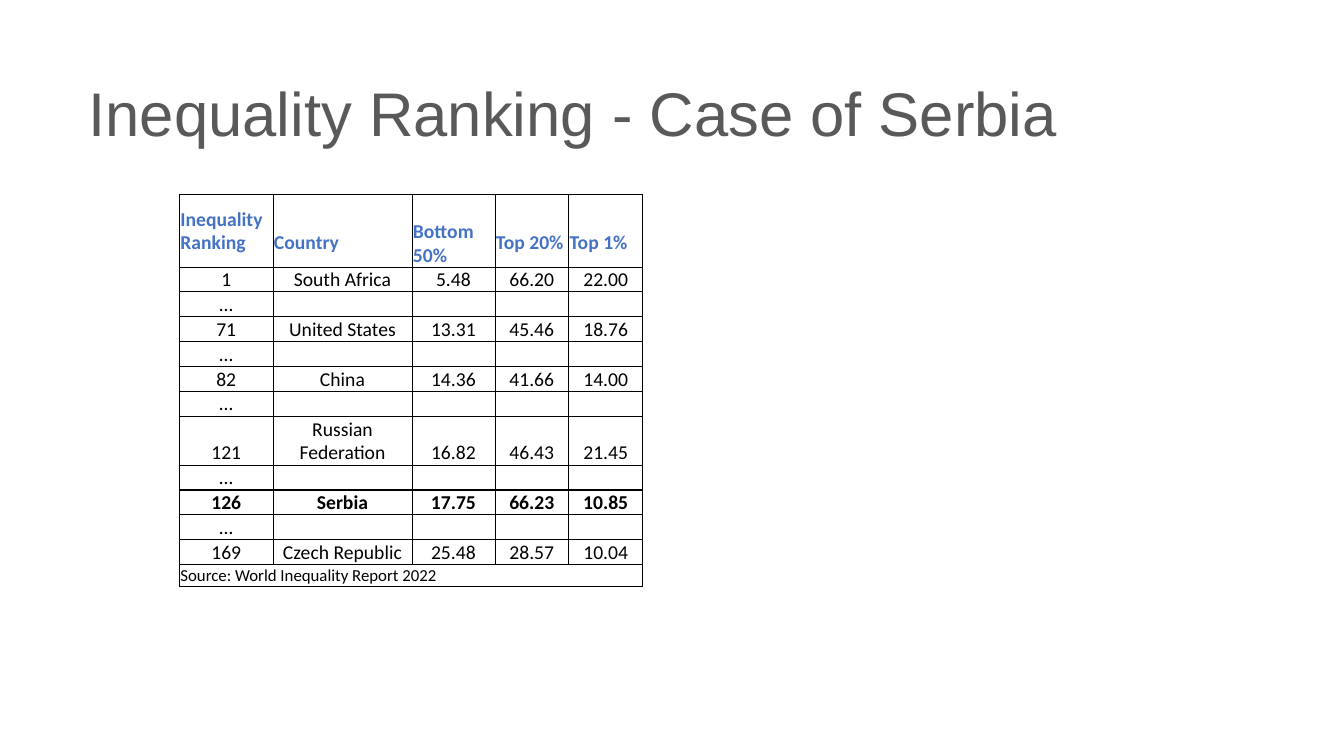
"""Builds a slide with a table of inequality rankings around Serbia."""
from lxml import etree
from pptx import Presentation
from pptx import util as u
from pptx.dml import color
from pptx.enum import text
from pptx.oxml import ns

COLORS = {"title": "595959", "heading": "4472C4", "body": "000000", "border": "000000"}
HEADINGS = ["Inequality Ranking", "Country", "Bottom 50%", "Top 20%", "Top 1%"]
GAP = ["…", "", "", "", ""]
RANKING = [
    ["1", "South Africa", "5.48", "66.20", "22.00"],
    GAP,
    ["71", "United States", "13.31", "45.46", "18.76"],
    GAP,
    ["82", "China", "14.36", "41.66", "14.00"],
    GAP,
    ["121", "Russian Federation", "16.82", "46.43", "21.45"],
    GAP,
    ["126", "Serbia", "17.75", "66.23", "10.85"],
    GAP,
    ["169", "Czech Republic", "25.48", "28.57", "10.04"],
]
SOURCE = "Source: World Inequality Report 2022"
WIDTHS = [66.8, 99.3, 59.2, 52.8, 52.8]
LINE = 17.1


class SlideBuilder:
    def __init__(self, page, colors):
        self.page = page
        self.colors = colors

    def label(self, frame, words, ink, align=text.PP_ALIGN.LEFT, **style):
        para = frame.paragraphs[0]
        para.alignment = align
        if not words:
            para._p.get_or_add_endParaRPr().set("sz", str(style["size"].centipoints))
            return
        span = para.add_run()
        span.text = words
        for name, value in style.items():
            setattr(span.font, name, value)
        span.font.color.rgb = color.RGBColor.from_string(self.colors[ink])

    def title(self, words, left, top, width, height):
        box = self.page.shapes.add_textbox(*map(u.Pt, (left, top, width, height)))
        frame = box.text_frame
        frame.word_wrap = True
        frame.margin_top = u.Pt(8.6)
        self.label(frame, words, "title", name="Arial", size=u.Pt(44))

    def table(self, left, top, widths, heights):
        frame = self.page.shapes.add_table(
            len(heights), len(widths),
            *map(u.Pt, (left, top, sum(widths), sum(heights))))
        table = frame.table
        table.first_row = table.horz_banding = False
        for column, width in zip(table.columns, widths):
            column.width = u.Pt(width)
        for row, height in zip(table.rows, heights):
            row.height = u.Pt(height)
        return table

    def cell(self, cell, words, ink="body", size=14, bold=False, padding=0.7,
             align=text.PP_ALIGN.CENTER, anchor=text.MSO_ANCHOR.BOTTOM, borders=None):
        layout = {"margin_left": u.Pt(0.7), "margin_right": u.Pt(0.7),
                  "margin_top": u.Pt(padding), "margin_bottom": 0,
                  "vertical_anchor": anchor}
        for name, value in layout.items():
            setattr(cell, name, value)
        cell.fill.background()
        self.border(cell, borders or {})
        self.label(cell.text_frame, words, ink, align,
                   name="Calibri", size=u.Pt(size), bold=bold)

    def border(self, cell, widths):
        properties = cell._tc.get_or_add_tcPr()
        for place, side in enumerate("LRTB"):
            line = etree.Element(ns.qn(f"a:ln{side}"), w=str(u.Pt(widths.get(side, 0.5))))
            fill = etree.SubElement(line, ns.qn("a:solidFill"))
            etree.SubElement(fill, ns.qn("a:srgbClr"), val=self.colors["border"])
            properties.insert(place, line)


def main():
    deck = Presentation()
    deck.slide_width, deck.slide_height = u.Pt(960), u.Pt(540)
    builder = SlideBuilder(deck.slides.add_slide(deck.slide_layouts[6]), COLORS)
    builder.title("Inequality Ranking - Case of Serbia", 56.2, 44.6, 728.6, 82.8)

    body_heights = [35 if row[1] == "Russian Federation" else 17.8 for row in RANKING]
    table = builder.table(128.2, 139, WIDTHS, [51.6, *body_heights, 15.6])
    for index, heading in enumerate(HEADINGS):
        builder.cell(table.cell(0, index), heading, "heading", bold=True,
                     padding=0.7 + (LINE if index else 0),
                     align=text.PP_ALIGN.LEFT, anchor=text.MSO_ANCHOR.MIDDLE,
                     borders={} if index else {"L": 1})

    serbia = [row[1] for row in RANKING].index("Serbia")
    for number, row in enumerate(RANKING):
        for index, words in enumerate(row):
            borders = {} if index else {"L": 1}
            if number in (serbia, serbia + 1):
                borders["T"] = 1
            if number in (serbia - 1, serbia):
                borders["B"] = 1
            builder.cell(table.cell(number + 1, index), words,
                         bold=number == serbia, borders=borders)

    last = len(RANKING) + 1
    table.cell(last, 0).merge(table.cell(last, len(WIDTHS) - 1))
    for index in range(len(WIDTHS)):
        builder.cell(table.cell(last, index), "" if index else SOURCE, size=12,
                     align=text.PP_ALIGN.LEFT, borders={} if index else {"L": 1})
    deck.save("out.pptx")


if __name__ == "__main__":
    main()
